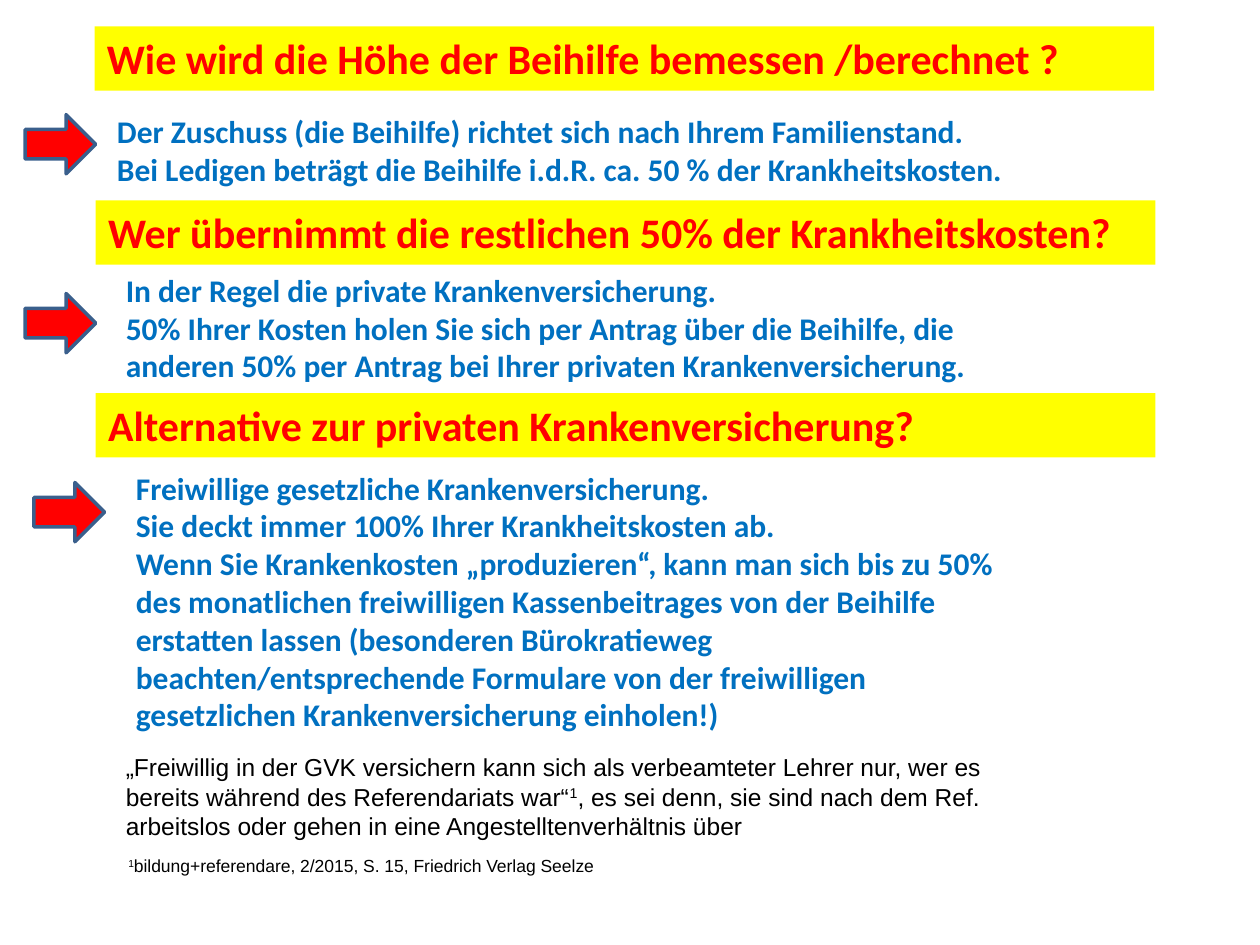
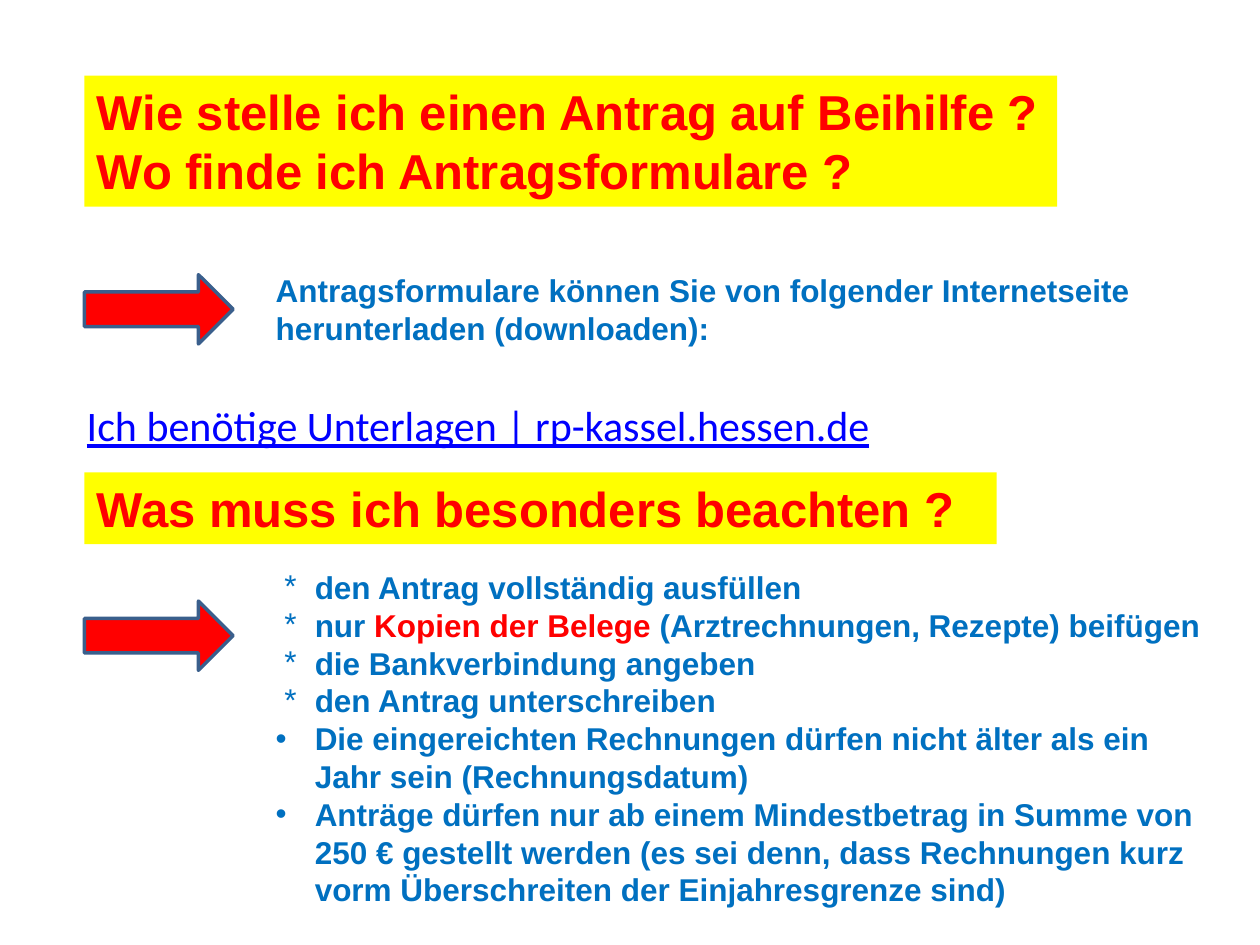
from lxml import etree
from pptx import Presentation
from pptx.dml.color import RGBColor
from pptx.enum.shapes import MSO_SHAPE as Shape
from pptx.enum.text import MSO_ANCHOR as Anchor
from pptx.enum.text import PP_ALIGN as Align
from pptx.oxml.ns import qn
from pptx.util import Inches, Pt

COLORS = {
    "band": "FFFF00",
    "accent": "FF0000",
    "answer": "0070C0",
    "outline": "3A5F8C",
    "note": "000000",
    "link": "0000FF",
}


def color(name):
    return RGBColor.from_string(COLORS[name])


def inches(box):
    return [Inches(length) for length in box]


def add_bullet(paragraph, char, left, hanging):
    properties = paragraph._p.get_or_add_pPr()
    properties.set("marL", str(Inches(left)))
    properties.set("indent", str(-Inches(hanging)))
    etree.SubElement(properties, qn("a:buFont")).set("typeface", "Arial")
    etree.SubElement(properties, qn("a:buChar")).set("char", char)


def write(frame, paragraphs, font, size, ink, bold=False, bullets=()):
    """Fill a frame; a paragraph is a string or a list of (text, style) runs.

    A style is None, "super" for superscript, or a colour name.
    """
    frame.word_wrap = True
    frame.vertical_anchor = Anchor.TOP
    for index, content in enumerate(paragraphs):
        paragraph = frame.paragraphs[0] if index == 0 else frame.add_paragraph()
        paragraph.alignment = Align.LEFT
        if bullets:
            add_bullet(paragraph, *bullets[index])
        paragraph.font.name = font
        paragraph.font.size = Pt(size)
        paragraph.font.bold = bold
        paragraph.font.color.rgb = color(ink)
        runs = [(content, None)] if isinstance(content, str) else content
        for text, style in runs:
            run = paragraph.add_run()
            run.text = text
            if style == "super":
                run._r.get_or_add_rPr().set("baseline", "30000")
            elif style:
                run.font.color.rgb = color(style)


def add_text(slide, box, paragraphs, font, size, ink, **options):
    frame = slide.shapes.add_textbox(*inches(box)).text_frame
    write(frame, paragraphs, font, size, ink, **options)
    return frame


def add_question(slide, box, lines, font, size):
    """Yellow band with one or more lines of red heading."""
    band = slide.shapes.add_shape(Shape.RECTANGLE, *inches(box))
    band.shadow.inherit = False
    band.fill.solid()
    band.fill.fore_color.rgb = color("band")
    band.line.fill.background()
    write(band.text_frame, lines, font, size, "accent", bold=True)


def add_arrow(slide, box):
    arrow = slide.shapes.add_shape(Shape.RIGHT_ARROW, *inches(box))
    arrow.shadow.inherit = False
    arrow.fill.solid()
    arrow.fill.fore_color.rgb = color("accent")
    arrow.line.color.rgb = color("outline")
    arrow.line.width = Pt(2)


def add_section(slide, question, question_box, answer, answer_box, arrow_box,
                font, question_size, bullets=()):
    """Question band, arrow and the answer the arrow points to."""
    add_question(slide, question_box, question, font, question_size)
    add_text(slide, answer_box, answer, font, 18, "answer", bold=True, bullets=bullets)
    add_arrow(slide, arrow_box)


def build_amount_slide(slide):
    sections = [
        ("Wie wird die Höhe der Beihilfe bemessen /berechnet ?", (0.75, 0.21),
         ["Der Zuschuss (die Beihilfe) richtet sich nach Ihrem Familienstand.",
          "Bei Ledigen beträgt die Beihilfe i.d.R. ca. 50 % der Krankheitskosten."],
         (0.83, 0.84, 7.4, 0.71), (0.2, 0.91)),
        ("Wer übernimmt die restlichen 50% der Krankheitskosten?", (0.76, 1.59),
         ["In der Regel die private Krankenversicherung.",
          "50% Ihrer Kosten holen Sie sich per Antrag über die Beihilfe, die "
          "anderen 50% per Antrag bei Ihrer privaten Krankenversicherung."],
         (0.9, 2.1, 7.4, 1.01), (0.2, 2.33)),
        ("Alternative zur privaten Krankenversicherung?", (0.76, 3.12),
         ["Freiwillige gesetzliche Krankenversicherung.",
          "Sie deckt immer 100% Ihrer Krankheitskosten ab.",
          "Wenn Sie Krankenkosten „produzieren“, kann man sich bis zu 50% des "
          "monatlichen freiwilligen Kassenbeitrages von der Beihilfe erstatten "
          "lassen (besonderen Bürokratieweg beachten/entsprechende Formulare von "
          "der freiwilligen gesetzlichen Krankenversicherung einholen!)"],
         (0.98, 3.67, 7.01, 2.22), (0.27, 3.83)),
    ]
    for question, band_corner, answer, answer_box, arrow_corner in sections:
        add_section(slide, [question], (*band_corner, 8.41, 0.51), answer, answer_box,
                    (*arrow_corner, 0.56, 0.47), "Calibri", 24)

    quote = [
        ("„Freiwillig in der GVK versichern kann sich als verbeamteter Lehrer nur, "
         "wer es bereits während des Referendariats war“", None),
        ("1", "super"),
        (", es sei denn, sie sind nach dem Ref. arbeitslos oder gehen in eine "
         "Angestelltenverhältnis über", None),
    ]
    source = [("1", "super"),
              ("bildung+referendare, 2/2015, S. 15, Friedrich Verlag Seelze", None)]
    add_text(slide, (0.9, 5.92, 7.56, 0.81), [quote], "Arial", 14, "note")
    add_text(slide, (0.92, 6.74, 6.34, 0.57), [source], "Arial", 10, "note")


def build_application_slide(slide):
    left, answer_left = 0.67, 2.09
    arrow_size = (1.18, 0.55)
    add_section(
        slide,
        ["Wie stelle ich einen Antrag auf Beihilfe ?", "Wo finde ich Antragsformulare ?"],
        (left, 0.6, 7.72, 1.04),
        ["Antragsformulare können Sie von folgender Internetseite "
         "herunterladen (downloaden):"],
        (answer_left, 2.1, 7.16, 0.71), (left, 2.18, *arrow_size), "Arial", 28)

    link = add_text(slide, (0.59, 3.12, 9.14, 0.5),
                    ["Ich benötige Unterlagen | rp-kassel.hessen.de"],
                    "Calibri", 24, "link")
    link.paragraphs[0].font.underline = True

    steps = [
        "den Antrag vollständig ausfüllen",
        [("nur ", None), ("Kopien der Belege ", "accent"),
         ("(Arztrechnungen, Rezepte) beifügen", None)],
        "die Bankverbindung angeben",
        "den Antrag unterschreiben",
    ]
    limits = [
        "Die eingereichten Rechnungen dürfen nicht älter als ein Jahr sein "
        "(Rechnungsdatum)",
        "Anträge dürfen nur ab einem Mindestbetrag in Summe von 250 € gestellt "
        "werden (es sei denn, dass Rechnungen kurz vorm Überschreiten der "
        "Einjahresgrenze sind)",
    ]
    bullets = [("*", 0.31, 0.24)] * len(steps) + [("•", 0.31, 0.31)] * len(limits)
    add_section(slide, ["Was muss ich besonders beachten ?"], (left, 3.75, 7.24, 0.57),
                steps + limits, (answer_left, 4.46, 7.64, 2.9),
                (left, 4.77, *arrow_size), "Arial", 28, bullets)


def main():
    deck = Presentation()
    deck.slide_width, deck.slide_height = Inches(10), Inches(7.5)
    blank = deck.slide_layouts[6]
    for build in (build_amount_slide, build_application_slide):
        build(deck.slides.add_slide(blank))
    deck.save("out.pptx")


if __name__ == "__main__":
    main()
